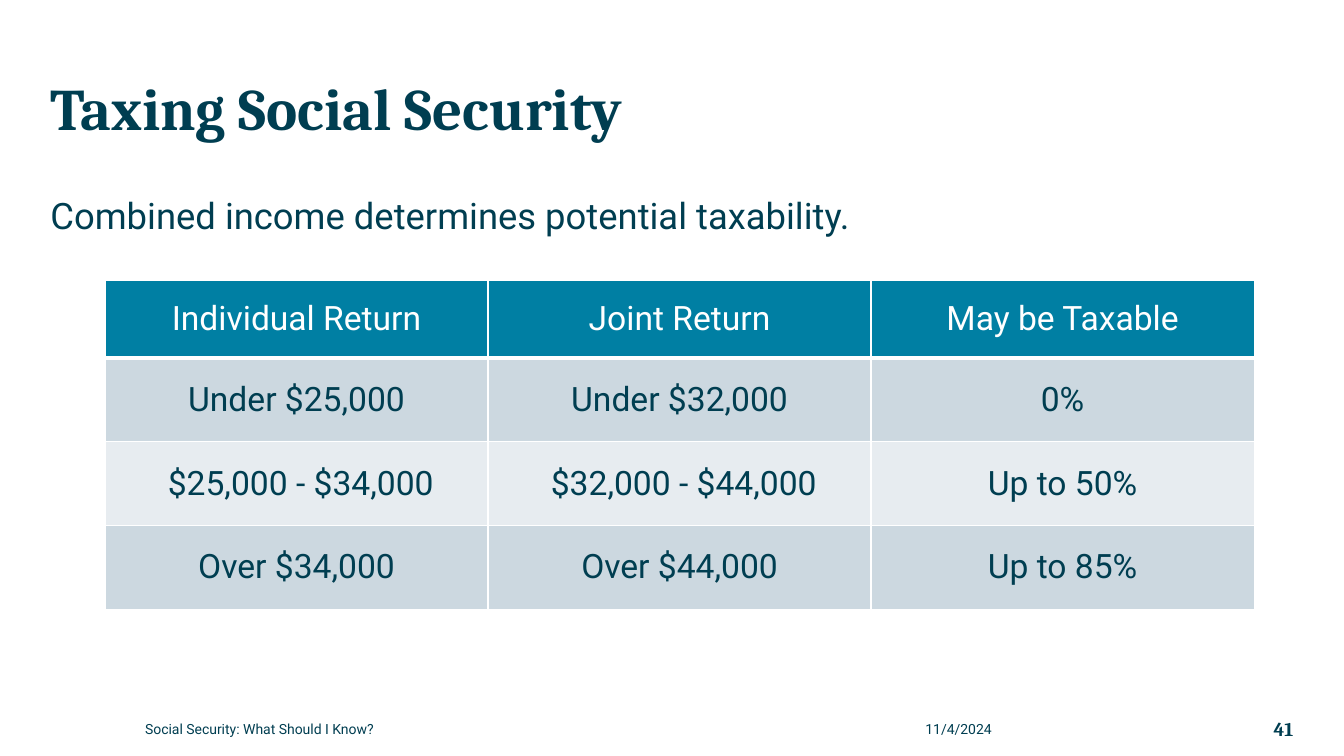
from dataclasses import dataclass

from lxml import etree
from pptx import Presentation
from pptx.dml.color import RGBColor
from pptx.enum.text import MSO_ANCHOR, MSO_AUTO_SIZE, PP_ALIGN
from pptx.oxml.ns import qn
from pptx.util import Pt

LEFT, CENTER, RIGHT = PP_ALIGN.LEFT, PP_ALIGN.CENTER, PP_ALIGN.RIGHT
TOP, MIDDLE, BOTTOM = MSO_ANCHOR.TOP, MSO_ANCHOR.MIDDLE, MSO_ANCHOR.BOTTOM
NO_FIT = MSO_AUTO_SIZE.NONE
TITLE_ONLY = 5


@dataclass(frozen=True)
class Theme:
    ink: str = "003E51"
    white: str = "FFFFFF"
    header: str = "007FA3"
    bands: tuple = ("CCD8E0", "E7ECF0")
    heading_font: str = "Cambria"
    body_font: str = "Roboto"
    title_size: float = 42
    lead_size: float = 26
    table_size: float = 24
    number_size: float = 14
    footer_size: float = 10


THEME = Theme()

TAX_ROWS = [
    ["Individual Return", "Joint Return", "May be Taxable"],
    ["Under $25,000", "Under $32,000", "0%"],
    [" $25,000 - $34,000", " $32,000 - $44,000", "Up to 50%"],
    ["Over $34,000", "Over $44,000", "Up to 85%"],
]
COLUMN_WIDTH = 273.6
HEADER_HEIGHT, ROW_HEIGHT = 55.4, 59.8
THIN, THICK = 1, 3


def set_all(target, values):
    for name, value in values.items():
        setattr(target, name, value)


def write(frame, text, size, align=LEFT, font=THEME.body_font,
          color=THEME.ink, bold=False, line_spacing=1.0):
    frame.text = text
    para = frame.paragraphs[0]
    set_all(para, {"alignment": align, "line_spacing": line_spacing,
                   "space_before": Pt(0)})
    span = para.runs[0]
    set_all(span.font, {"name": font, "size": Pt(size), "bold": bold})
    span.font.color.rgb = RGBColor.from_string(color)


def format_box(box, place, anchor):
    left, top, width, height = map(Pt, place)
    set_all(box, {"left": left, "top": top, "width": width, "height": height})
    set_all(box.text_frame, {
        "word_wrap": True, "auto_size": NO_FIT, "vertical_anchor": anchor,
        "margin_left": 0, "margin_right": 0,
        "margin_top": 0, "margin_bottom": 0,
    })


def add_title(page, text, place):
    title = page.shapes.title
    format_box(title, place, BOTTOM)
    write(title.text_frame, text, THEME.title_size, font=THEME.heading_font,
          bold=True, line_spacing=0.9)


def add_text(page, text, place, size, anchor=MIDDLE, **style):
    box = page.shapes.add_textbox(0, 0, 0, 0)
    format_box(box, place, anchor)
    write(box.text_frame, text, size, **style)


def add_borders(cell, top, bottom):
    """Draw white cell edges; call before the cell gets its fill."""
    properties = cell._tc.get_or_add_tcPr()
    widths = {"a:lnL": THIN, "a:lnR": THIN, "a:lnT": top, "a:lnB": bottom}
    for tag, width in widths.items():
        line = etree.SubElement(properties, qn(tag), w=str(Pt(width)))
        fill = etree.SubElement(line, qn("a:solidFill"))
        etree.SubElement(fill, qn("a:srgbClr"), val=THEME.white)


def add_tax_table(page, rows, left, top):
    columns = len(rows[0])
    height = HEADER_HEIGHT + ROW_HEIGHT * (len(rows) - 1)
    table = page.shapes.add_table(
        len(rows), columns, Pt(left), Pt(top),
        Pt(COLUMN_WIDTH * columns), Pt(height)).table
    set_all(table, {"first_row": False, "horz_banding": False})
    for column in table.columns:
        column.width = Pt(COLUMN_WIDTH)
    for index, texts in enumerate(rows):
        is_header = index == 0
        table.rows[index].height = Pt(HEADER_HEIGHT if is_header else ROW_HEIGHT)
        fill = THEME.header if is_header else THEME.bands[(index - 1) % 2]
        for position, text in enumerate(texts):
            cell = table.cell(index, position)
            add_borders(cell, THICK if index == 1 else THIN,
                        THICK if is_header else THIN)
            cell.fill.solid()
            cell.fill.fore_color.rgb = RGBColor.from_string(fill)
            cell.vertical_anchor = MIDDLE
            write(cell.text_frame, text, THEME.table_size, align=CENTER,
                  color=THEME.white if is_header else THEME.ink)


def main():
    deck = Presentation()
    set_all(deck, {"slide_width": Pt(960), "slide_height": Pt(540)})
    page = deck.slides.add_slide(deck.slide_layouts[TITLE_ONLY])

    add_title(page, "Taxing Social Security", (36, 36, 888, 66))
    add_text(page, "Combined income determines potential taxability.",
             (36, 138, 888, 360), THEME.lead_size, anchor=TOP)
    add_tax_table(page, TAX_ROWS, 75, 200.4)

    add_text(page, "Social Security: What Should I Know?",
             (103.6, 510.6, 557.4, 19.6), THEME.footer_size)
    add_text(page, "11/4/2024", (661, 510.6, 182, 19.6), THEME.footer_size)
    add_text(page, "41", (844, 510.6, 80, 20), THEME.number_size,
             align=RIGHT, font=THEME.heading_font, bold=True)

    deck.save("out.pptx")


if __name__ == "__main__":
    main()
